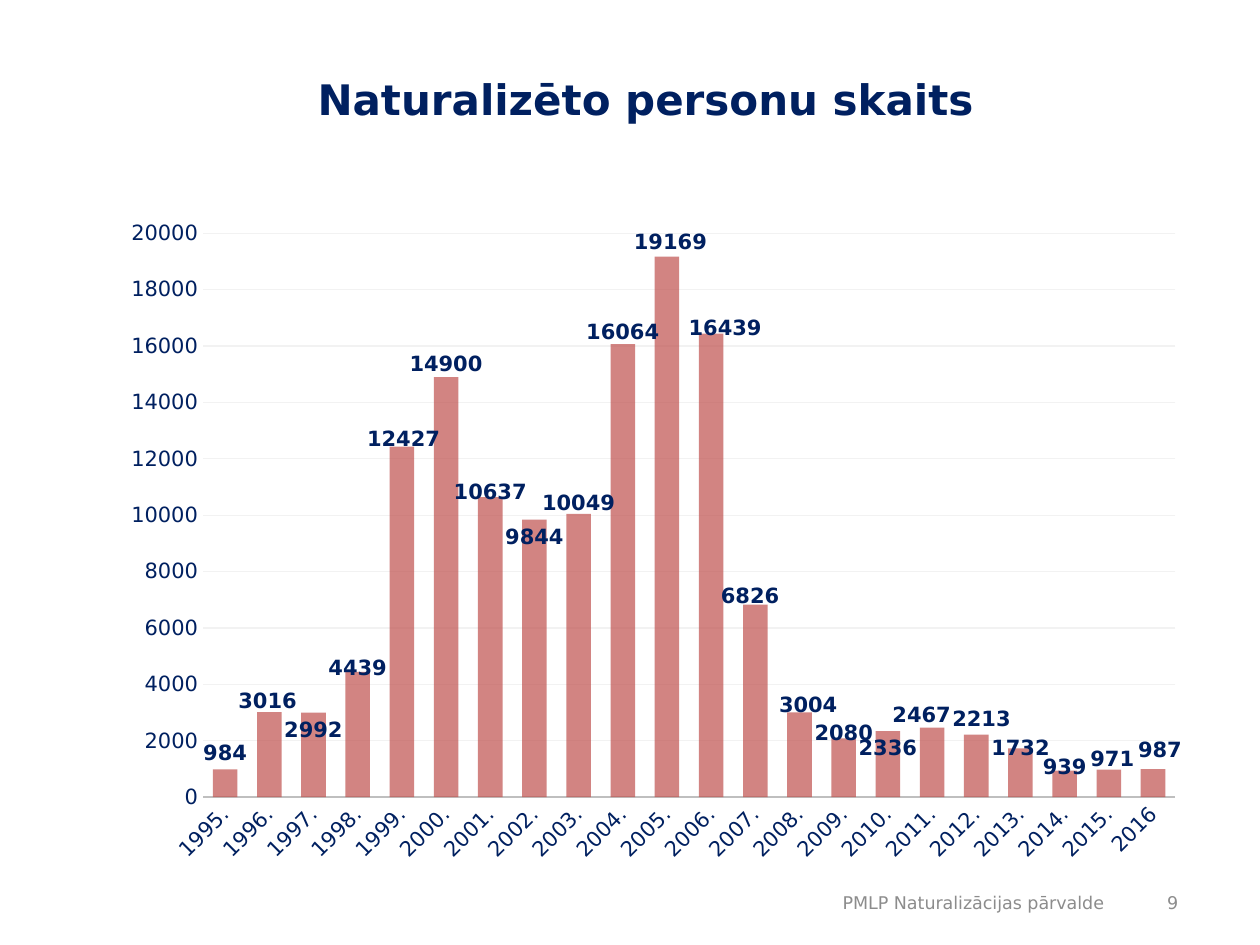
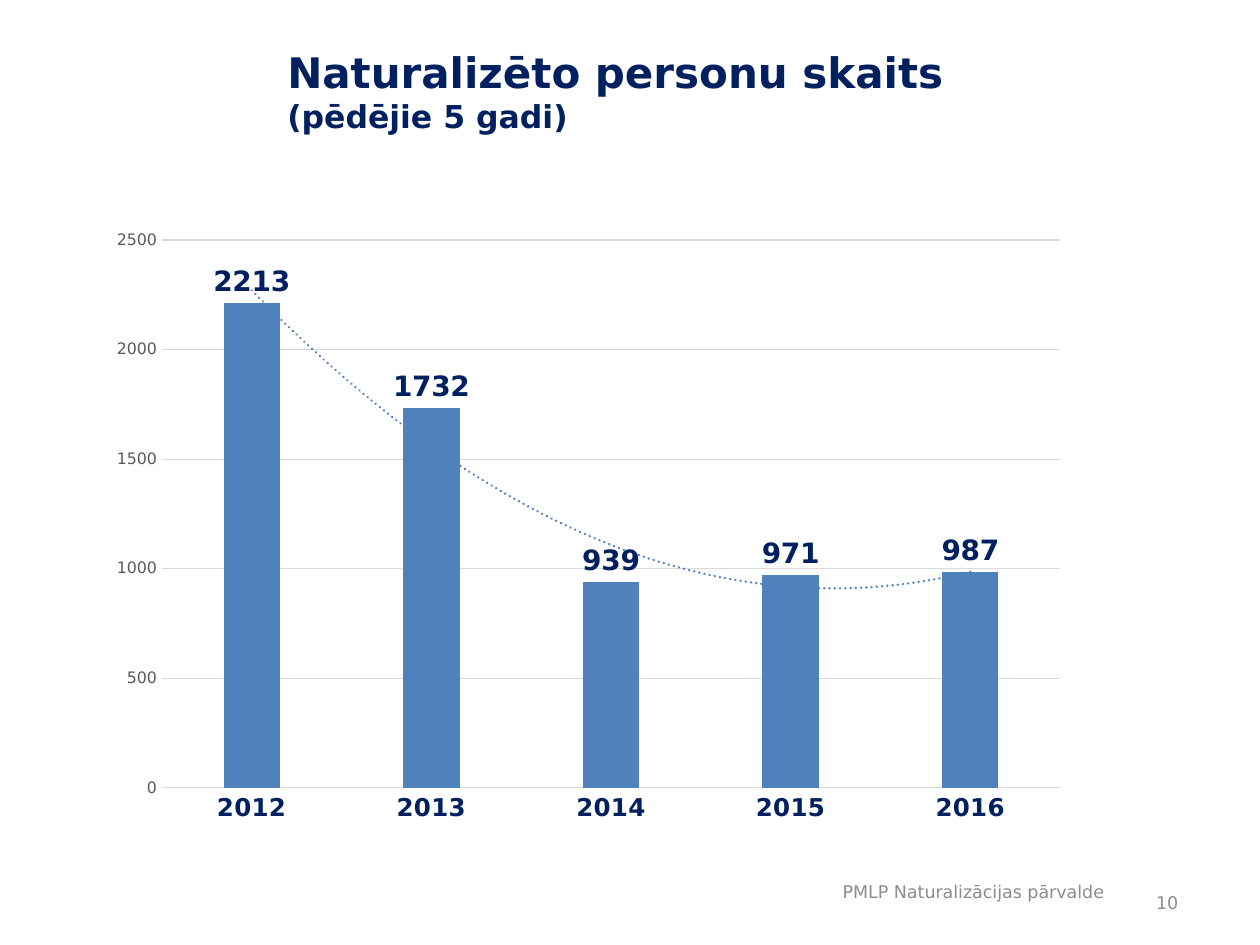
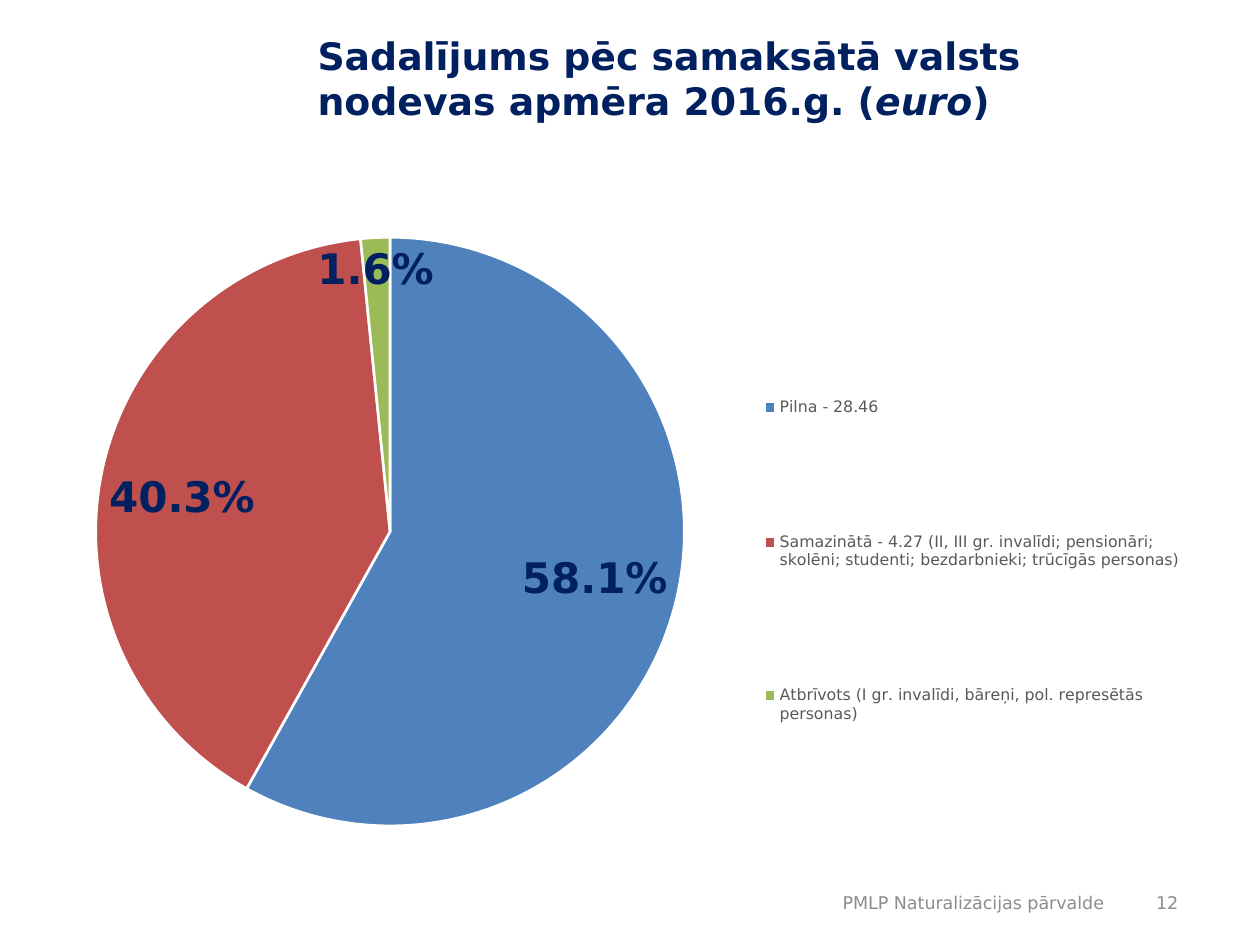
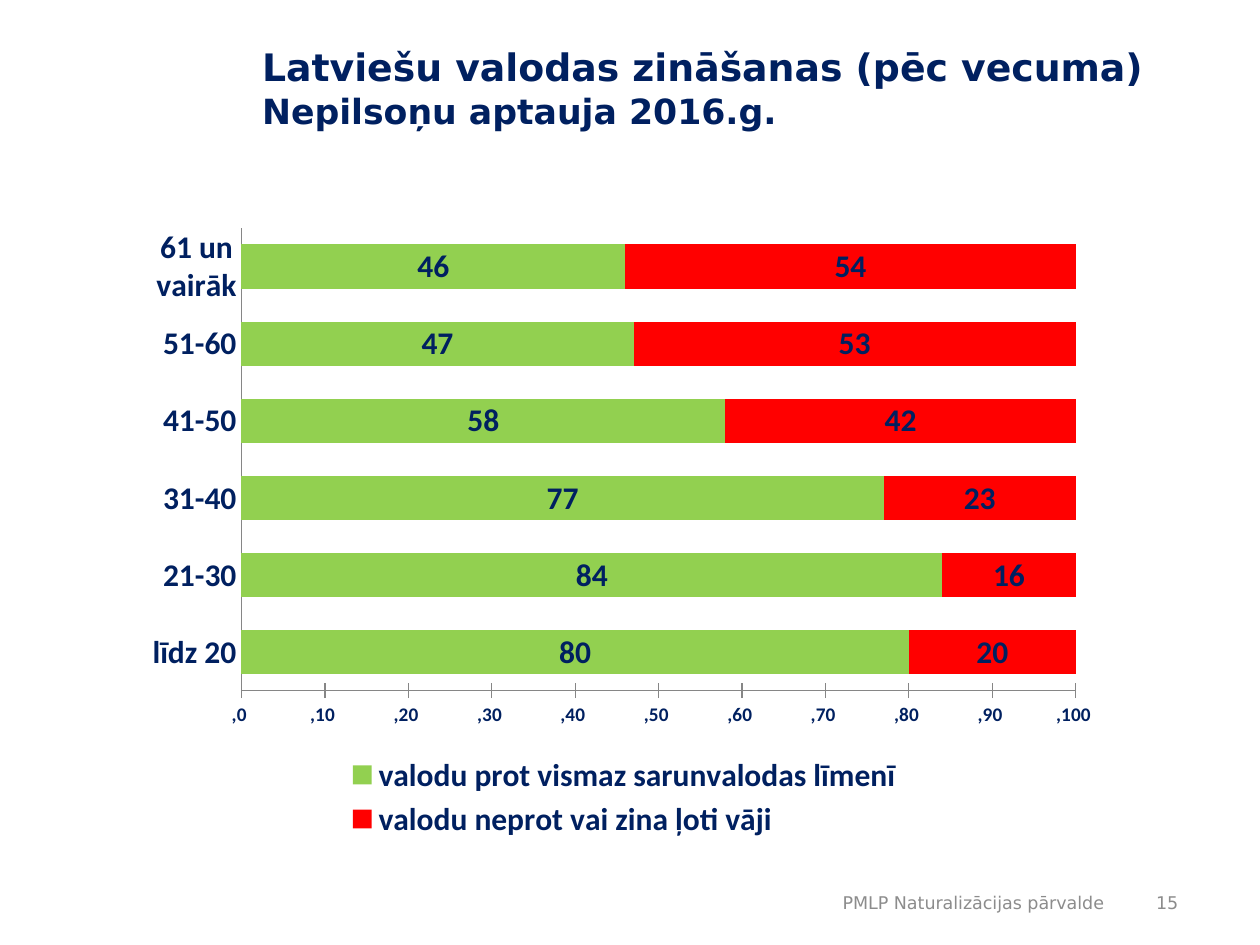
from lxml import etree
from pptx import Presentation
from pptx.chart.data import CategoryChartData
from pptx.dml.color import RGBColor
from pptx.enum.chart import (XL_CHART_TYPE, XL_LABEL_POSITION, XL_LEGEND_POSITION,
                             XL_TICK_LABEL_POSITION, XL_TICK_MARK)
from pptx.enum.text import MSO_ANCHOR, MSO_AUTO_SIZE, PP_ALIGN
from pptx.oxml import parse_xml
from pptx.oxml.ns import nsdecls, qn
from pptx.util import Pt

COLUMNS, STACKED_BARS, PIE = (XL_CHART_TYPE.COLUMN_CLUSTERED,
                              XL_CHART_TYPE.BAR_STACKED, XL_CHART_TYPE.PIE)
INSIDE_END, OUTSIDE_END, CENTER = (XL_LABEL_POSITION.INSIDE_END,
                                   XL_LABEL_POSITION.OUTSIDE_END, XL_LABEL_POSITION.CENTER)
LEGEND_RIGHT, LEGEND_BOTTOM = XL_LEGEND_POSITION.RIGHT, XL_LEGEND_POSITION.BOTTOM
TICK_NONE, TICK_CROSS = XL_TICK_MARK.NONE, XL_TICK_MARK.CROSS
LABELS_LOW = XL_TICK_LABEL_POSITION.LOW
LEFT, RIGHT = PP_ALIGN.LEFT, PP_ALIGN.RIGHT
BOTTOM, MIDDLE = MSO_ANCHOR.BOTTOM, MSO_ANCHOR.MIDDLE
NO_FIT = MSO_AUTO_SIZE.NONE

COLORS = {
    "navy": "002060", "black": "000000", "footer": "8C8C8C", "small": "595959",
    "blue": "4F81BD", "red": "C0504D", "olive": "9BBB59", "white": "FFFFFF",
    "know": "92D050", "lack": "FF0000", "base": "BFBFBF", "pale": "F2F2F2",
    "grid": "D9D9D9", "axis": "868686",
}
SANS, CALIBRI = "DejaVu Sans", "Calibri"
TITLE_BOX = (174.24, 26.64, 505.44, 47.52)
FOOTER_BOX = (409.68, 501.12, 228.24, 28.8)
NUMBER_BOX = (646.56, 501.12, 33.84, 28.8)
FOOTER_TEXT = "PMLP Naturalizācijas pārvalde"


# Shared text helpers
def rgb(name):
    return RGBColor.from_string(COLORS[name])


def format_font(font, size, color="navy", bold=False, name=SANS, italic=None):
    font.size, font.bold, font.name, font.italic = Pt(size), bold, name, italic
    font.color.rgb = rgb(color)


def add_text(para, text, **style):
    """Add one formatted span; a line feed starts a new line in the paragraph."""
    lines = text.split("\n")
    for index, line in enumerate(lines):
        if index:
            para.add_line_break()
        if line:
            span = para.add_run()
            span.text = line
            format_font(span.font, **style)


def place(shape, box):
    shape.left, shape.top, shape.width, shape.height = map(Pt, box)


def add_title(page, spans, box=TITLE_BOX):
    title = page.shapes.title
    place(title, box)
    frame = title.text_frame
    frame.word_wrap, frame.auto_size, frame.vertical_anchor = True, NO_FIT, BOTTOM
    para = frame.paragraphs[0]
    para.alignment = LEFT
    for text, style in spans:
        add_text(para, text, bold=True, **style)


def add_footer(page, number, rise=0):
    left, top, width, height = FOOTER_BOX
    for text, box in ((FOOTER_TEXT, (left, top - rise, width, height)),
                      (str(number), NUMBER_BOX)):
        frame = page.shapes.add_textbox(*map(Pt, box)).text_frame
        frame.word_wrap, frame.vertical_anchor = True, MIDDLE
        para = frame.paragraphs[0]
        para.alignment = RIGHT
        add_text(para, text, size=10, color="footer")


def add_page(deck, number, title, title_box=TITLE_BOX, footer_rise=0):
    page = deck.slides.add_slide(deck.slide_layouts[5])
    add_title(page, title, title_box)
    add_footer(page, number, footer_rise)
    return page


# Shared chart helpers
def set_layout(parent, index, **values):
    """Give a chart part a manual layout, in fractions of the chart."""
    for old in parent.findall(qn("c:layout")):
        parent.remove(old)
    layout = parse_xml(f"<c:layout {nsdecls('c')}><c:manualLayout/></c:layout>")
    for key, value in values.items():
        etree.SubElement(layout[0], qn(f"c:{key}")).set("val", str(value))
    parent.insert(index, layout)


def edge_layout(frame):
    return dict(xMode="edge", yMode="edge", **dict(zip("xywh", frame)))


def add_chart(page, kind, box, categories, series, plot_frame, font_name=SANS):
    data = CategoryChartData()
    data.categories = categories
    for name, values in series:
        data.add_series(name, values)
    chart = page.shapes.add_chart(kind, *map(Pt, box), data).chart
    chart.has_title = chart.has_legend = False
    format_font(chart.font, 10, "black", name=font_name)
    plot_area = chart.plots[0]._element.getparent()
    set_layout(plot_area, 0, layoutTarget="inner", **edge_layout(plot_frame))
    return chart


def format_bars(chart, gap, overlap, colors):
    plot = chart.plots[0]
    plot.gap_width, plot.overlap, plot.vary_by_categories = gap, overlap, False
    for series, color in zip(plot.series, colors):
        series.invert_if_negative = False
        series.format.fill.solid()
        series.format.fill.fore_color.rgb = rgb(color)


def format_axis(axis, line=None, width=0.75, grid=None, unit=None, top=None,
                tick=TICK_NONE, **style):
    axis.major_tick_mark, axis.minor_tick_mark = tick, TICK_NONE
    format_font(axis.tick_labels.font, **style)
    if line:
        axis.format.line.color.rgb = rgb(line)
        axis.format.line.width = Pt(width)
    else:
        axis.format.line.fill.background()
    axis.has_major_gridlines = grid is not None
    if grid:
        grid_line = axis.major_gridlines.format.line
        grid_line.color.rgb = rgb(grid)
        grid_line.width = Pt(0.75)
    if unit:
        axis.minimum_scale, axis.maximum_scale, axis.major_unit = 0, top, unit


def add_labels(series, position, size, name=SANS):
    labels = series.data_labels
    labels.show_value, labels.position = True, position
    format_font(labels.font, size, bold=True, name=name)
    return labels


def add_legend(chart, position, frame, **style):
    chart.has_legend = True
    legend = chart.legend
    legend.position, legend.include_in_layout = position, False
    format_font(legend.font, **style)
    set_layout(legend._element, 1, **edge_layout(frame))


# Naturalised persons, all years
def add_all_years(page, box):
    years = [f"{year}." for year in range(1995, 2016)] + ["2016"]
    counts = (984, 3016, 2992, 4439, 12427, 14900, 10637, 9844, 10049, 16064, 19169,
              16439, 6826, 3004, 2080, 2336, 2467, 2213, 1732, 939, 971, 987)
    chart = add_chart(page, COLUMNS, box, years, [("Series 1", counts)],
                      (0.087, 0.038, 0.893, 0.843))
    format_bars(chart, 80, 25, ["red"])
    format_axis(chart.category_axis, "base", 1.25, size=12)
    format_axis(chart.value_axis, grid="pale", unit=2000, top=20000, size=12)
    tick_text = chart.category_axis._element.find(qn("c:txPr"))
    tick_text.find(qn("a:bodyPr")).set("rot", "-2700000")

    series = chart.plots[0].series[0]
    color = next(series._element.iter(qn("a:srgbClr")))
    etree.SubElement(color, qn("a:alpha")).set("val", "70000")
    add_labels(series, INSIDE_END, 12)

    # Labels moved off their bars, by points right and up
    moves = {0: (0, 19), 1: (-1, 16), 3: (0, 12), 4: (1, 14), 5: (0, 17), 6: (0, 13),
             8: (0, 16), 9: (0, 17), 10: (2, 18), 11: (8, 13), 12: (-3, 15),
             13: (5, 14), 14: (0, 13), 16: (-6, 17), 17: (3, 19), 18: (0, 10),
             19: (0, 12), 20: (2, 16), 21: (4, 21)}
    for index, (right, up) in moves.items():
        label = series.points[index].data_label
        format_font(label.font, 12, bold=True)
        label.position = INSIDE_END
    for element in series._element.iter(qn("c:dLbl")):
        right, up = moves[int(element.find(qn("c:idx")).get("val"))]
        set_layout(element, 1, x=round(right / box[2], 4), y=round(-up / box[3], 4))


# Naturalised persons, last five years, with a trend
def add_last_years(page, box):
    years = [str(year) for year in range(2012, 2017)]
    chart = add_chart(page, COLUMNS, box, years,
                      [("Series 1", (2213, 1732, 939, 971, 987))],
                      (0.066, 0.034, 0.914, 0.891))
    format_bars(chart, 219, -27, ["blue"])
    format_axis(chart.category_axis, "grid", size=14, bold=True)
    format_axis(chart.value_axis, grid="grid", unit=500, top=2500, size=9, color="small")
    series = chart.plots[0].series[0]
    add_labels(series, OUTSIDE_END, 16)
    trend = parse_xml(
        f'<c:trendline {nsdecls("c", "a")}><c:spPr><a:ln w="{Pt(1.5)}" cap="rnd">'
        f'<a:solidFill><a:srgbClr val="{COLORS["blue"]}"/></a:solidFill>'
        '<a:prstDash val="sysDot"/></a:ln></c:spPr><c:trendlineType val="poly"/>'
        '<c:order val="2"/><c:dispRSqr val="0"/><c:dispEq val="0"/></c:trendline>')
    series._element.find(qn("c:cat")).addprevious(trend)


# Shares by state fee paid
def add_fee_shares(page, box):
    groups = ("Pilna - 28.46",
              "Samazinātā - 4.27 (II, III gr. invalīdi; pensionāri; skolēni; "
              "studenti; bezdarbnieki; trūcīgās personas)",
              "Atbrīvots (I gr. invalīdi, bāreņi, pol. represētās personas)")
    chart = add_chart(page, PIE, box, groups, [("Series 1", (0.581, 0.403, 0.016))],
                      (0.067, 0.029, 0.499, 0.942))
    series = chart.plots[0].series[0]
    for index, color in enumerate(("blue", "red", "olive")):
        part = series.points[index].format
        part.fill.solid()
        part.fill.fore_color.rgb = rgb(color)
        part.line.color.rgb = rgb("white")
        part.line.width = Pt(1.5)
    labels = add_labels(series, INSIDE_END, 24)
    labels.number_format, labels.number_format_is_linked = "0.0%", False
    add_legend(chart, LEGEND_RIGHT, (0.627, 0.1, 0.365, 0.893), size=9, color="small")


# Language skills by age
def add_language_skills(page, box):
    ages = ("līdz 20", "21-30", "31-40", "41-50", "51-60", "61 un vairāk")
    able = (80, 84, 77, 58, 47, 46)
    series = [("valodu prot vismaz sarunvalodas līmenī", able),
              ("valodu neprot vai zina ļoti vāji", [100 - share for share in able])]
    chart = add_chart(page, STACKED_BARS, box, ages, series,
                      (0.11, 0.02, 0.85, 0.736), CALIBRI)
    format_bars(chart, 75, 100, ["know", "lack"])
    bold = dict(bold=True, name=CALIBRI)
    format_axis(chart.category_axis, "axis", size=18, **bold)
    format_axis(chart.value_axis, "axis", unit=10, top=100, tick=TICK_CROSS, size=11, **bold)
    ticks = chart.value_axis.tick_labels
    ticks.number_format, ticks.number_format_is_linked = r'#\,##0" ";"("#\,##0")"', False
    chart.value_axis.tick_label_position = LABELS_LOW
    for answers in chart.plots[0].series:
        add_labels(answers, CENTER, 18, CALIBRI)
    add_legend(chart, LEGEND_BOTTOM, (0.215, 0.85, 0.57, 0.15), size=18, **bold)


def main():
    deck = Presentation()
    deck.slide_width, deck.slide_height = Pt(720), Pt(540)
    large, medium = dict(size=24), dict(size=21.6)

    page = add_page(deck, 9, [("Naturalizēto personu skaits", large)])
    add_all_years(page, (61.92, 118.8, 622.08, 382.32))

    page = add_page(deck, 10, [("Naturalizēto personu skaits\n", large),
                               ("(pēdējie 5 gadi)", dict(size=18))],
                    (156.96, 0, 505.44, 80.64), footer_rise=6)
    add_last_years(page, (55.44, 125.28, 561.6, 351.36))

    page = add_page(deck, 12, [
        ("Sadalījums pēc samaksātā valsts nodevas apmēra 2016.g. (", medium),
        ("euro", dict(size=21.6, italic=True)), (")", medium)])
    add_fee_shares(page, (9.36, 125.28, 674.64, 357.12))

    page = add_page(deck, 15, [("Latviešu valodas zināšanas (pēc vecuma)\n", medium),
                               ("Nepilsoņu aptauja 2016.g.", dict(size=19.8))],
                    (142.56, 26.64, 536.4, 51.84))
    add_language_skills(page, (76.32, 123.12, 560.88, 359.28))

    deck.save("out.pptx")


if __name__ == "__main__":
    main()
